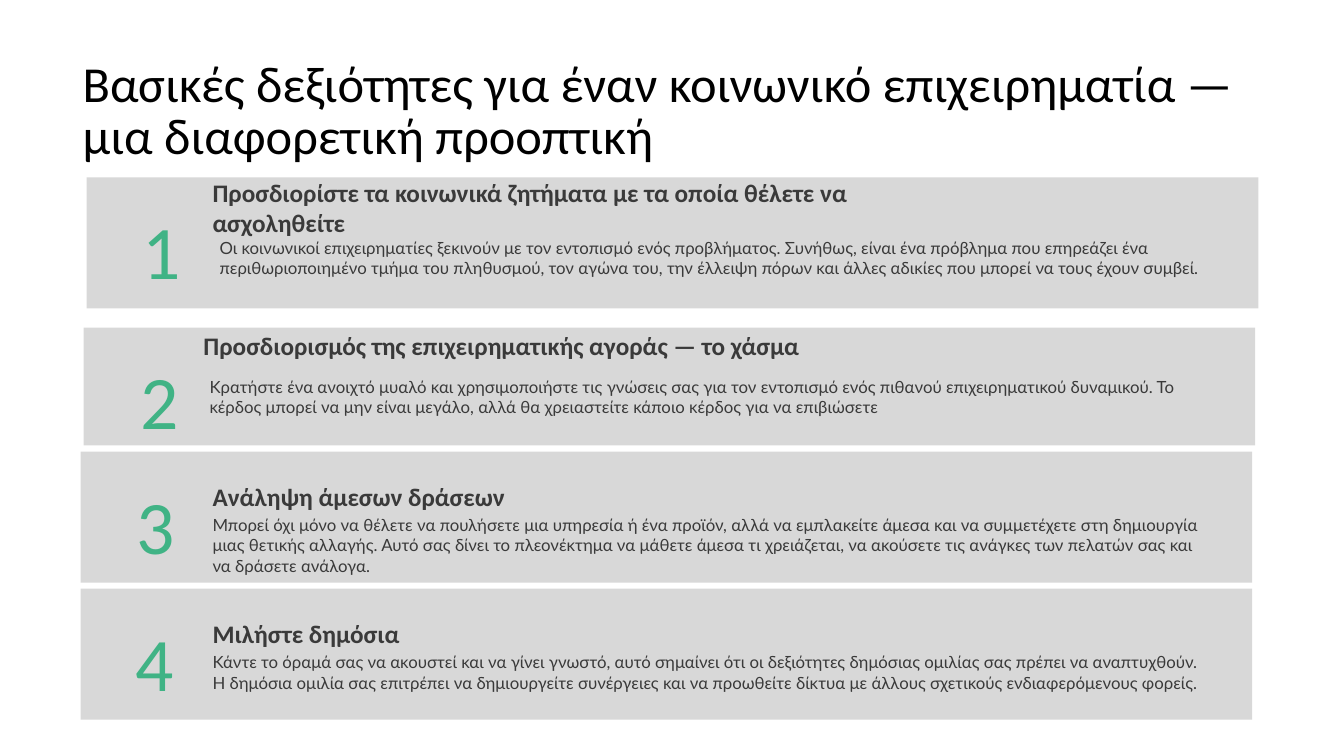
from pptx import Presentation
from pptx.dml.color import RGBColor
from pptx.enum.shapes import MSO_SHAPE
from pptx.enum.text import MSO_ANCHOR as Anchor, MSO_AUTO_SIZE as AutoSize, PP_ALIGN as Align
from pptx.util import Pt

PX = 9144  # EMU per px, 100 px to the inch
PANEL_GREY = RGBColor(0xD8, 0xD8, 0xD8)
TEXT_GREY = RGBColor(0x3A, 0x3A, 0x3A)
GREEN = RGBColor(0x40, 0xB3, 0x85)
BLACK = RGBColor(0, 0, 0)


def place(shape, box):
    shape.left, shape.top, shape.width, shape.height = [value * PX for value in box]


def write(shape, text, size, font, color, anchor, inset=(10, 5), bold=False, align=Align.LEFT):
    frame = shape.text_frame
    frame.text = text
    frame.word_wrap = True
    frame.auto_size = AutoSize.NONE
    frame.vertical_anchor = anchor
    frame.margin_left = frame.margin_right = inset[0] * PX
    frame.margin_top = frame.margin_bottom = inset[1] * PX
    paragraph = frame.paragraphs[0]
    paragraph.alignment = align
    paragraph.font.size = Pt(size)
    paragraph.font.name = font
    paragraph.font.bold = bold
    paragraph.font.color.rgb = color
    return paragraph


presentation = Presentation()
presentation.slide_width = 1333 * PX
presentation.slide_height = 750 * PX
slide = presentation.slides.add_slide(presentation.slide_layouts[5])
shapes = slide.shapes

# Title
title = shapes.title
place(title, (72, 55, 1178, 114))
title_paragraph = write(
    title, "Βασικές δεξιότητες για έναν κοινωνικό επιχειρηματία — μια διαφορετική προοπτική",
    36, "Calibri", BLACK, Anchor.MIDDLE)
title_paragraph.line_spacing = 0.85

# Skills: panel, number, heading and body boxes, then heading and body wording
skills = [
    ((86, 176, 1162, 130), (116, 182, 88, 117), (201, 189, 717, 33), (208, 231, 1034, 82),
     "Προσδιορίστε τα κοινωνικά ζητήματα με τα οποία θέλετε να ασχοληθείτε",
     "Οι κοινωνικοί επιχειρηματίες ξεκινούν με τον εντοπισμό ενός προβλήματος. Συνήθως, "
     "είναι ένα πρόβλημα που επηρεάζει ένα περιθωριοποιημένο τμήμα του πληθυσμού, τον αγώνα "
     "του, την έλλειψη πόρων και άλλες αδικίες που μπορεί να τους έχουν συμβεί."),
    ((83, 325, 1162, 117), (114, 331, 88, 117), (192, 326, 717, 33), (198, 369, 1000, 41),
     "Προσδιορισμός της επιχειρηματικής αγοράς — το χάσμα",
     "Κρατήστε ένα ανοιχτό μυαλό και χρησιμοποιήστε τις γνώσεις σας για τον εντοπισμό ενός "
     "πιθανού επιχειρηματικού δυναμικού. Το κέρδος μπορεί να μην είναι μεγάλο, αλλά θα "
     "χρειαστείτε κάποιο κέρδος για να επιβιώσετε"),
    ((80, 448, 1162, 130), (111, 455, 87, 117), (201, 476, 717, 32), (201, 506, 1000, 66),
     "Ανάληψη άμεσων δράσεων",
     "Μπορεί όχι μόνο να θέλετε να πουλήσετε μια υπηρεσία ή ένα προϊόν, αλλά να εμπλακείτε "
     "άμεσα και να συμμετέχετε στη δημιουργία μιας θετικής αλλαγής. Αυτό σας δίνει το "
     "πλεονέκτημα να μάθετε άμεσα τι χρειάζεται, να ακούσετε τις ανάγκες των πελατών σας "
     "και να δράσετε ανάλογα."),
    ((80, 584, 1162, 130), (110, 591, 87, 117), (201, 612, 717, 32), (201, 642, 1000, 53),
     "Μιλήστε δημόσια",
     "Κάντε το όραμά σας να ακουστεί και να γίνει γνωστό, αυτό σημαίνει ότι οι δεξιότητες "
     "δημόσιας ομιλίας σας πρέπει να αναπτυχθούν. Η δημόσια ομιλία σας επιτρέπει να "
     "δημιουργείτε συνέργειες και να προωθείτε δίκτυα με άλλους σχετικούς ενδιαφερόμενους "
     "φορείς."),
]

for number, (panel_box, number_box, heading_box, body_box, heading, body) in enumerate(skills, 1):
    panel = shapes.add_shape(MSO_SHAPE.RECTANGLE, 0, 0, 0, 0)
    place(panel, panel_box)
    panel.shadow.inherit = False
    panel.fill.solid()
    panel.fill.fore_color.rgb = PANEL_GREY
    panel.line.fill.background()

    body_text = shapes.add_textbox(0, 0, 0, 0)
    place(body_text, body_box)
    write(body_text, body, 12, "Lato", TEXT_GREY, Anchor.TOP)

    heading_text = shapes.add_textbox(0, 0, 0, 0)
    place(heading_text, heading_box)
    write(heading_text, heading, 18, "Calibri", TEXT_GREY, Anchor.MIDDLE, bold=True)

    number_text = shapes.add_textbox(0, 0, 0, 0)
    place(number_text, number_box)
    write(number_text, str(number), 54, "Calibri", GREEN, Anchor.BOTTOM, (13, 7),
          align=Align.CENTER)

presentation.save("out.pptx")
